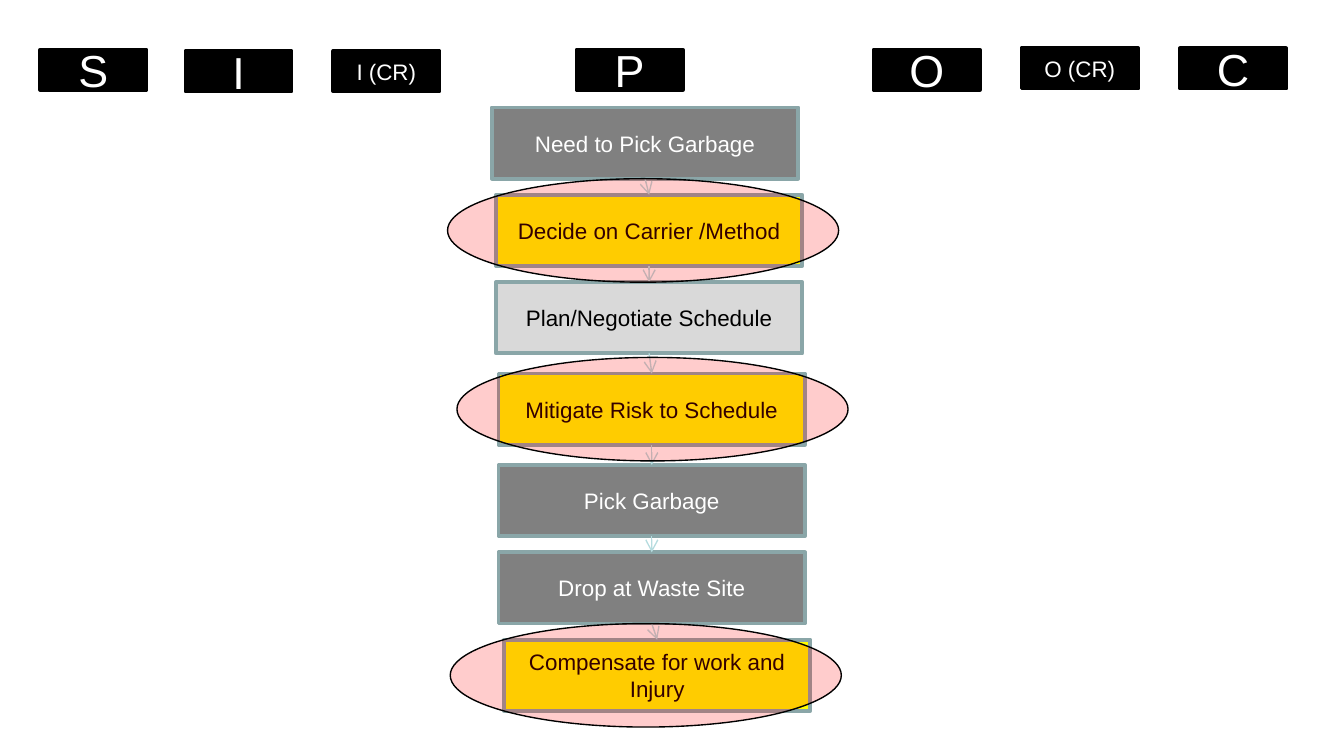
from itertools import pairwise

from lxml import etree
from pptx import Presentation
from pptx import util as u
from pptx.dml.color import RGBColor
from pptx.enum import shapes, text
from pptx.oxml import ns

HEADERS = [
    ("S", 0.3, 0.37, 0.79, "large"),
    ("I", 1.38, 0.38, 0.79, "large"),
    ("I (CR)", 2.48, 0.38, 0.79, "small"),
    ("P", 4.29, 0.37, 0.79, "large"),
    ("O", 6.5, 0.37, 0.79, "large"),
    ("O (CR)", 7.6, 0.36, 0.87, "small"),
    ("C", 8.78, 0.36, 0.79, "large"),
]
STEPS = [
    ("Need to Pick Garbage", 3.66, 0.8, "main"),
    ("Decide on Carrier /Method", 3.69, 1.45, "risk"),
    ("Plan/Negotiate Schedule", 3.69, 2.1, "plan"),
    ("Mitigate Risk to Schedule", 3.71, 2.78, "risk"),
    ("Pick Garbage", 3.71, 3.46, "main"),
    ("Drop at Waste Site", 3.71, 4.11, "main"),
    ("Compensate for work and Injury", 3.75, 4.76, "risk"),
]
HIGHLIGHTS = [(3.35, 4.64), (3.4, 2.66), (3.33, 1.33)]
SLIDE_W = 10
SLIDE_H = SLIDE_W * 9 / 16
HEADER_H = 0.3
STEP_SIZE = (2.28, 0.53)
HIGHLIGHT_SIZE = (2.91, 0.77)
BOTTOM, TOP = 2, 0

THEME = {
    "font": "Arial",
    "large": 24,
    "small": 12,
    "header": {"fill": "000000", "line": "000000", "ink": "FFFFFF"},
    "main": {"fill": "808080", "line": "8AA6A8", "ink": "FFFFFF"},
    "risk": {"fill": "FFFF00", "line": "8AA6A8", "ink": "000000"},
    "plan": {"fill": "D9D9D9", "line": "8AA6A8", "ink": "000000"},
    "highlight": {"fill": "FF0000", "line": "000000"},
    "arrow": "B6DCDF",
    "thick": 2,
    "thin": 0.75,
    "opacity": 20,
}


def set_attrs(obj, values):
    for name, value in values.items():
        setattr(obj, name, value)


def set_line(line, color, width):
    line.color.rgb = RGBColor.from_string(color)
    line.width = u.Pt(width)


def add_shape(s, kind, box, style, width):
    sp = s.shapes.add_shape(kind, *map(u.Inches, box))
    sp.shadow.inherit = False
    sp.fill.solid()
    sp.fill.fore_color.rgb = RGBColor.from_string(style["fill"])
    set_line(sp.line, style["line"], width)
    return sp


def add_box(s, label, box, style, size):
    sp = add_shape(s, shapes.MSO_SHAPE.RECTANGLE, box, style, THEME["thick"])
    tf = sp.text_frame
    set_attrs(tf, {"word_wrap": True, "vertical_anchor": text.MSO_ANCHOR.MIDDLE})
    p = tf.paragraphs[0]
    p.alignment = text.PP_ALIGN.CENTER
    r = p.add_run()
    r.text = label
    set_attrs(r.font, {"name": THEME["font"], "size": u.Pt(THEME[size])})
    r.font.color.rgb = RGBColor.from_string(style["ink"])
    return sp


def add_arrow(s, upper, lower):
    c = s.shapes.add_connector(shapes.MSO_CONNECTOR.STRAIGHT, 0, 0, 0, 0)
    c.begin_connect(upper, BOTTOM)
    c.end_connect(lower, TOP)
    set_line(c.line, THEME["arrow"], THEME["thin"])
    sp_pr = c._element.spPr
    etree.SubElement(sp_pr.find(ns.qn("a:ln")), ns.qn("a:tailEnd"), type="arrow")
    etree.SubElement(sp_pr, ns.qn("a:effectLst"))


def add_highlight(s, box):
    sp = add_shape(s, shapes.MSO_SHAPE.OVAL, box, THEME["highlight"], THEME["thin"])
    color = sp._element.spPr.find(ns.qn("a:solidFill"))[0]
    etree.SubElement(color, ns.qn("a:alpha"), val=str(THEME["opacity"] * 1000))


def main():
    prs = Presentation()
    set_attrs(
        prs, {"slide_width": u.Inches(SLIDE_W), "slide_height": u.Inches(SLIDE_H)}
    )
    s = prs.slides.add_slide(prs.slide_layouts[6])
    steps = [
        add_box(s, label, (x, y, *STEP_SIZE), THEME[style], "small")
        for label, x, y, style in STEPS
    ]
    for label, x, y, w, size in HEADERS:
        add_box(s, label, (x, y, w, HEADER_H), THEME["header"], size)
    for upper, lower in pairwise(steps):
        add_arrow(s, upper, lower)
    for x, y in HIGHLIGHTS:
        add_highlight(s, (x, y, *HIGHLIGHT_SIZE))
    prs.save("out.pptx")


if __name__ == "__main__":
    main()
